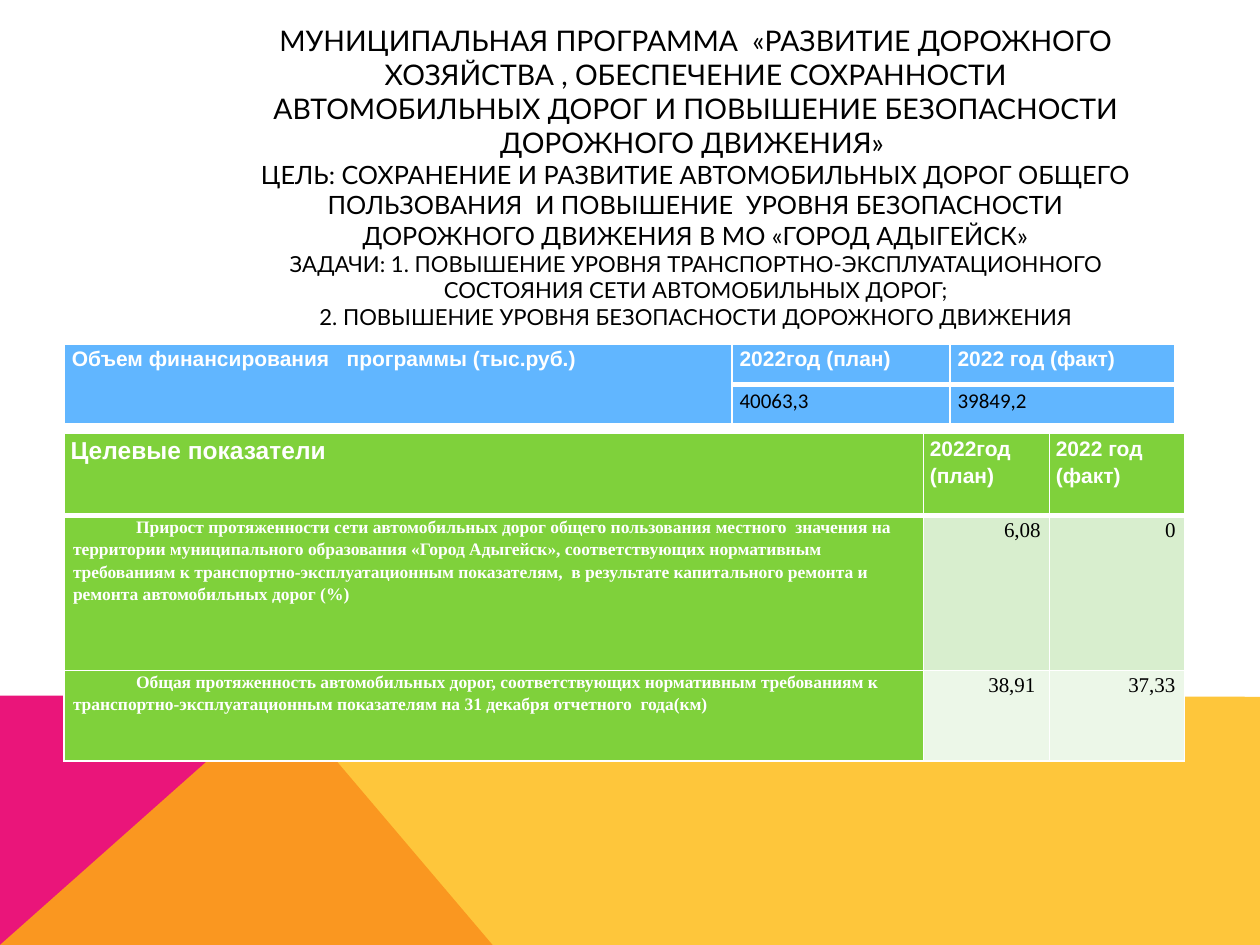
from lxml import etree
from pptx import Presentation
from pptx.dml.color import RGBColor
from pptx.enum import text
from pptx.oxml import ns
from pptx.util import Inches, Pt

theme = {
    "white": "FFFFFF", "black": "000000", "blue": "61B6FF", "green": "7FD13B",
    "pale": "D8EECE", "paler": "ECF7E8", "pink": "EA157A", "amber": "FEB80A",
    "title": 16.2, "goal": 14.4, "tasks": 12.6,
    "heading": 14, "body": 12, "small": 10,
    "title_font": "Lato", "head_font": "Arial", "number_font": "Calibri", "row_font": "Times New Roman",
}


def add_span(para, words, size, font, color, bold=False):
    span = para.add_run()
    span.text = words
    span.font.size = Pt(theme[size])
    span.font.name = theme[font]
    span.font.bold = bold
    span.font.color.rgb = RGBColor.from_string(theme[color])


def fill_cell(cell, lines, look, fill, inset, align="LEFT", indent=0, top=1, bottom=1):
    cell.margin_left = cell.margin_right = Inches(inset)
    cell.margin_top = cell.margin_bottom = 0
    props = cell._tc.get_or_add_tcPr()
    for side, width in (("L", 1), ("R", 1), ("T", top), ("B", bottom)):
        border = etree.SubElement(props, ns.qn("a:ln" + side), w=str(Pt(width)))
        paint = etree.SubElement(border, ns.qn("a:solidFill"))
        etree.SubElement(paint, ns.qn("a:srgbClr"), val=theme["white"])
    cell.fill.solid()
    cell.fill.fore_color.rgb = RGBColor.from_string(theme[fill])
    for number, line in enumerate(lines):
        para = cell.text_frame.add_paragraph() if number else cell.text_frame.paragraphs[0]
        para.alignment = text.PP_ALIGN[align]
        para.line_spacing = 1.15
        if indent:
            para._p.get_or_add_pPr().set("indent", str(Inches(indent)))
        add_span(para, line, *look)


deck = Presentation()
deck.slide_width, deck.slide_height = Inches(10), Inches(7.5)
page = deck.slides.add_slide(deck.slide_layouts[5])

bands = [
    ("pink", 100, [(0, 7.5), (0, 5.52), (2.23, 5.52), (3.91, 7.5)]),
    ("amber", 80, [(0, 7.5), (2.23, 5.52), (10, 5.53), (10, 7.5)]),
]
for color, opacity, corners in bands:
    points = [(Inches(x), Inches(y)) for x, y in corners]
    builder = page.shapes.build_freeform(*points[0])
    builder.add_line_segments(points[1:], close=True)
    band = builder.convert_to_shape()
    band.shadow.inherit = False
    band.line.fill.background()
    band.fill.solid()
    band.fill.fore_color.rgb = RGBColor.from_string(theme[color])
    if opacity < 100:
        paint = band._element.spPr.find(ns.qn("a:solidFill"))[0]
        etree.SubElement(paint, ns.qn("a:alpha"), val=str(opacity * 1000))

title = page.shapes.title
title.left, title.top, title.width, title.height = Inches(1.96), Inches(0.16), Inches(7.12), Inches(2.48)
frame = title.text_frame
frame.word_wrap = True
frame.auto_size = text.MSO_AUTO_SIZE.NONE
frame.vertical_anchor = text.MSO_ANCHOR.MIDDLE
para = frame.paragraphs[0]
para.alignment = text.PP_ALIGN.CENTER
title_lines = [
    ("МУНИЦИПАЛЬНАЯ ПРОГРАММА  «РАЗВИТИЕ ДОРОЖНОГО ХОЗЯЙСТВА , ОБЕСПЕЧЕНИЕ СОХРАННОСТИ АВТОМОБИЛЬНЫХ ДОРОГ И ПОВЫШЕНИЕ БЕЗОПАСНОСТИ ДОРОЖНОГО ДВИЖЕНИЯ» ", "title"),
    ("ЦЕЛЬ: СОХРАНЕНИЕ И РАЗВИТИЕ АВТОМОБИЛЬНЫХ ДОРОГ ОБЩЕГО ПОЛЬЗОВАНИЯ  И ПОВЫШЕНИЕ  УРОВНЯ БЕЗОПАСНОСТИ ДОРОЖНОГО ДВИЖЕНИЯ В МО «ГОРОД АДЫГЕЙСК»", "goal"),
    ("ЗАДАЧИ: 1. ПОВЫШЕНИЕ УРОВНЯ ТРАНСПОРТНО-ЭКСПЛУАТАЦИОННОГО СОСТОЯНИЯ СЕТИ АВТОМОБИЛЬНЫХ ДОРОГ;", "tasks"),
    ("2. ПОВЫШЕНИЕ УРОВНЯ БЕЗОПАСНОСТИ ДОРОЖНОГО ДВИЖЕНИЯ", "tasks"),
]
for number, (words, size) in enumerate(title_lines):
    if number:
        para.add_line_break()
    add_span(para, words, size, "title_font", "black")

tables = []
for top, columns, rows in (
    (2.73, [5.3, 1.73, 1.78], [0.32, 0.31]),
    (3.44, [6.82, 1, 1.07], [0.65, 1.23, 0.72]),
):
    table = page.shapes.add_table(
        len(rows), len(columns), Inches(0.51), Inches(top), Inches(sum(columns)), Inches(sum(rows))
    ).table
    table.first_row = table.horz_banding = False
    for column, width in zip(table.columns, columns):
        column.width = Inches(width)
    for row, height in zip(table.rows, rows):
        row.height = Inches(height)
    tables.append(table)
funding, targets = tables

head = ("body", "head_font", "white", True)
amount = ("body", "number_font", "black")
funding.cell(0, 0).merge(funding.cell(1, 0))
fill_cell(funding.cell(0, 0), ["Объем финансирования   программы (тыс.руб.)"], head, "blue", 0.06)
for column, (year, value) in enumerate([("2022год (план)", "40063,3"), ("2022 год (факт)", "39849,2")], 1):
    fill_cell(funding.cell(0, column), [year], head, "blue", 0.06, bottom=3)
    fill_cell(funding.cell(1, column), [value], amount, "blue", 0.06, top=3)

headings = [["Целевые показатели"], ["2022год", "(план)"], ["2022 год", "(факт)"]]
for column, lines in enumerate(headings):
    look = head if column else ("heading", *head[1:])
    fill_cell(targets.cell(0, column), lines, look, "green", 0.05, bottom=3)

label = ("small", "row_font", "white", True)
figure = ("body", "row_font", "black")
indicators = [
    ("Прирост протяженности сети автомобильных дорог общего пользования местного  значения на территории муниципального образования «Город Адыгейск», соответствующих нормативным требованиям к транспортно-эксплуатационным показателям,  в результате капитального ремонта и ремонта автомобильных дорог (%)", "6,08", "0", "pale", 3),
    ("Общая протяженность автомобильных дорог, соответствующих нормативным требованиям к транспортно-эксплуатационным показателям на 31 декабря отчетного  года(км)", "38,91 ", "37,33", "paler", 1),
]
for row, (name, plan, fact, shade, top) in enumerate(indicators, 1):
    fill_cell(targets.cell(row, 0), [name], label, "green", 0.07, indent=0.5, top=top)
    for column, value in enumerate([plan, fact], 1):
        fill_cell(targets.cell(row, column), [value], figure, shade, 0.07, align="RIGHT", top=top)

deck.save("out.pptx")
